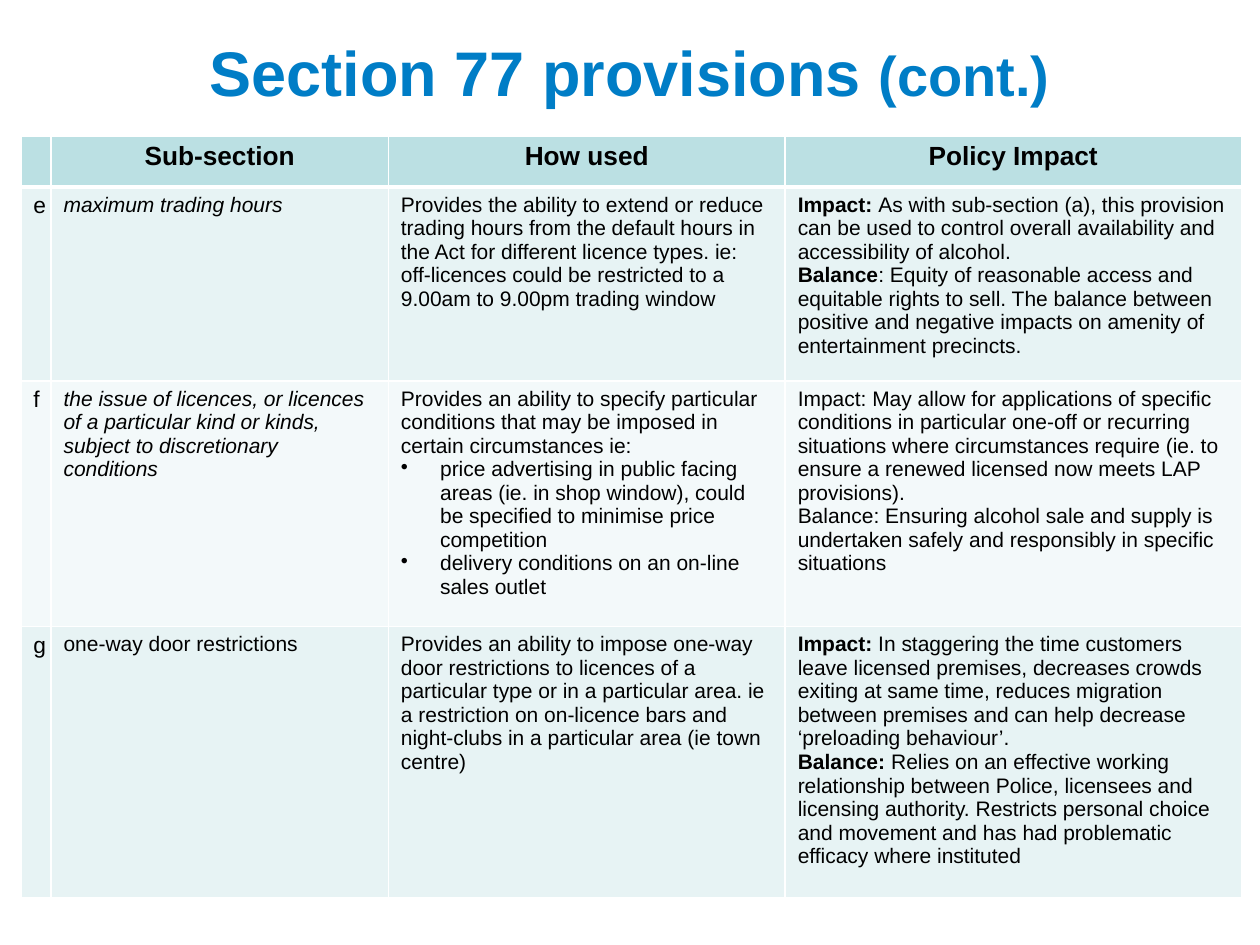
import pptx
import pptx.util
import pptx.dml.color
import pptx.enum.text
import pptx.oxml
import pptx.oxml.ns
from pptx.util import Cm

# Content: a cell is a list of paragraphs, a paragraph a list of (text, style) runs
BULLET = "•"
title_runs = [("Section 77 provisions ", "title"), ("(cont.)", "title_small")]
headings = ["", "Sub-section", "How used", "Policy Impact"]
provisions = [
    [
        [[("e", "letter")]],
        [[("maximum trading hours", "italic")]],
        [[("Provides the ability to extend or reduce trading hours from the default hours in "
           "the Act for different licence types. ie: off-licences could be restricted to a "
           "9.00am to 9.00pm trading window", "body")]],
        [[("Impact: ", "bold"),
          ("As with sub-section (a), this provision can be used to control overall "
           "availability and accessibility of alcohol.", "body")],
         [("Balance", "bold"),
          (": Equity of reasonable access and equitable rights to sell. The balance between "
           "positive and negative impacts on amenity of entertainment precincts.", "body")]],
    ],
    [
        [[("f", "letter")]],
        [[("the issue of licences, or licences of a particular kind or kinds, subject to "
           "discretionary conditions", "italic")]],
        [[("Provides an ability to specify particular conditions that may be imposed in "
           "certain circumstances ie:", "body")],
         [BULLET, ("price advertising in public facing areas (ie. in shop window), could be "
                   "specified to minimise price competition", "body")],
         [BULLET, ("delivery conditions on an on-line sales outlet", "body")]],
        [[("Impact: May allow for applications of specific conditions in particular one-off "
           "or recurring situations where circumstances require (ie. to ensure a renewed "
           "licensed now meets LAP provisions).", "body")],
         [("Balance: Ensuring alcohol sale and supply is undertaken safely and responsibly "
           "in specific situations", "body")]],
    ],
    [
        [[("g", "letter")]],
        [[("one-way door restrictions", "body")]],
        [[("Provides an ability to impose one-way door restrictions to licences of a "
           "particular type or in a particular area. ie a restriction on on-licence bars and "
           "night-clubs in a particular area (ie town centre)", "body")]],
        [[("Impact:", "bold"),
          (" In staggering the time customers leave licensed premises, decreases crowds "
           "exiting at same time, reduces migration between premises and can help decrease "
           "‘preloading behaviour’.", "body")],
         [("Balance:", "bold"),
          (" Relies on an effective working relationship between Police, licensees and "
           "licensing authority. Restricts personal choice and movement and has had "
           "problematic efficacy where instituted", "body")]],
    ],
]

# Theme
THEME = {
    "font": "Arial",
    "header_fill": "BBE0E3",
    "band_fills": ["E7F3F4", "F3F9FA"],
    "border": "FFFFFF",
    "styles": {
        "title": dict(size=36, color="007DC6", bold=True),
        "title_small": dict(size=32, color="007DC6", bold=True),
        "heading": dict(size=15, bold=True),
        "letter": dict(size=13),
        "body": dict(size=12),
        "bold": dict(size=12, bold=True),
        "italic": dict(size=12, italic=True),
    },
}
CENTER = pptx.enum.text.PP_ALIGN.CENTER
column_widths = [0.6, 6.8, 8.0, 9.2]
row_heights = [0.98, 3.91, 4.95, 5.47]


def add_text(paragraph, text, size, color="000000", bold=False, italic=False):
    run = paragraph.add_run()
    run.text = text
    run.font.name = THEME["font"]
    run.font.size = pptx.util.Pt(size)
    run.font.bold = bold
    run.font.italic = italic
    run.font.color.rgb = pptx.dml.color.RGBColor.from_string(color)


def fill_frame(frame, paragraphs, align=None):
    for index, parts in enumerate(paragraphs):
        paragraph = frame.add_paragraph() if index else frame.paragraphs[0]
        paragraph.alignment = align
        if parts[0] == BULLET:
            properties = paragraph._p.get_or_add_pPr()
            properties.set("marL", str(Cm(0.79)))
            properties.set("indent", str(-Cm(0.79)))
            properties.append(pptx.oxml.parse_xml(
                f'<a:buChar {pptx.oxml.ns.nsdecls("a")} char="{BULLET}"/>'))
            parts = parts[1:]
        for text, style in parts:
            add_text(paragraph, text, **THEME["styles"][style])


def format_cell(cell, fill, top=1, bottom=1):
    properties = cell._tc.get_or_add_tcPr()
    for side, points in {"L": 1, "R": 1, "T": top, "B": bottom}.items():
        properties.append(pptx.oxml.parse_xml(
            f'<a:ln{side} {pptx.oxml.ns.nsdecls("a")} w="{pptx.util.Pt(points)}">'
            f'<a:solidFill><a:srgbClr val="{THEME["border"]}"/></a:solidFill></a:ln{side}>'))
    cell.fill.solid()
    cell.fill.fore_color.rgb = pptx.dml.color.RGBColor.from_string(fill)


presentation = pptx.Presentation()
presentation.slide_width, presentation.slide_height = Cm(25.4), Cm(19.05)
slide = presentation.slides.add_slide(presentation.slide_layouts[5])

# Title
title = slide.shapes.title
title.left, title.top, title.width, title.height = Cm(1.27), Cm(0.46), Cm(22.86), Cm(1.96)
title.text_frame.vertical_anchor = pptx.enum.text.MSO_ANCHOR.MIDDLE
fill_frame(title.text_frame, [title_runs], align=CENTER)

# Provisions table
provisions_table = slide.shapes.add_table(
    len(row_heights), len(column_widths), Cm(0.42), Cm(2.74),
    Cm(sum(column_widths)), Cm(sum(row_heights))).table
provisions_table.first_row = provisions_table.horz_banding = False
for column, width in zip(provisions_table.columns, column_widths):
    column.width = Cm(width)
for row, height in zip(provisions_table.rows, row_heights):
    row.height = Cm(height)

# Header row
for column, heading in enumerate(headings):
    cell = provisions_table.cell(0, column)
    format_cell(cell, THEME["header_fill"], bottom=3)
    if heading:
        fill_frame(cell.text_frame, [[(heading, "heading")]], align=CENTER)

# Provision rows
for row, provision in enumerate(provisions, start=1):
    for column, paragraphs in enumerate(provision):
        cell = provisions_table.cell(row, column)
        format_cell(cell, THEME["band_fills"][(row - 1) % 2], top=3 if row == 1 else 1)
        fill_frame(cell.text_frame, paragraphs)

presentation.save("out.pptx")
